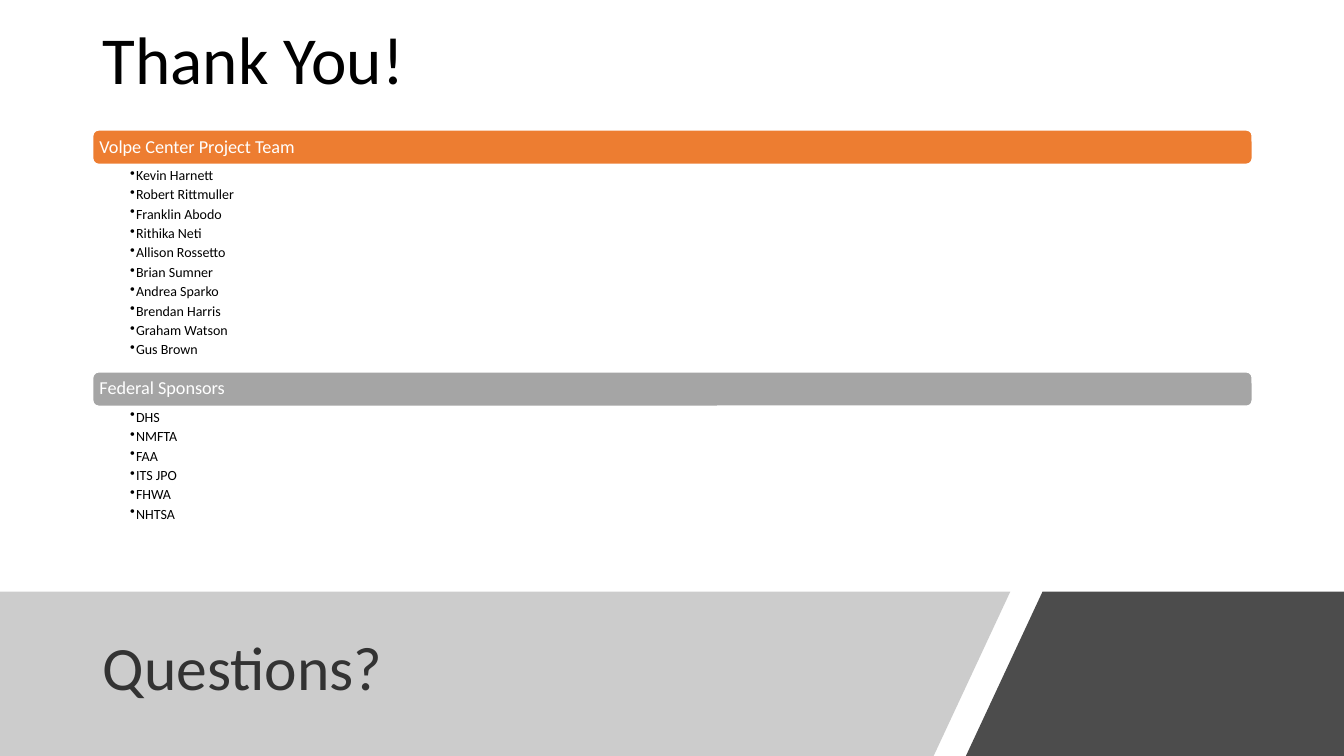
import pptx
import pptx.util
import pptx.dml.color
import pptx.enum.shapes
import pptx.enum.text
import pptx.oxml
import pptx.oxml.ns
from lxml import etree

W, H = 13.33, 7.5
LEFT, WIDTH = 0.92, 11.5
BAR_H = 0.34
FONT = "Calibri"

TEAMS = [
    # heading, bar colour, top, list height, names
    ("Volpe Center Project Team", "ED7D31", 1.29, 2.06,
     ["Kevin Harnett", "Robert Rittmuller", "Franklin Abodo", "Rithika Neti",
      "Allison Rossetto", "Brian Sumner", "Andrea Sparko", "Brendan Harris",
      "Graham Watson", "Gus Brown"]),
    ("Federal Sponsors", "A5A5A5", 3.69, 1.44,
     ["DHS", "NMFTA", "FAA", "ITS JPO", "FHWA", "NHTSA"]),
]


def inches(*values):
    return [pptx.util.Inches(v) for v in values]


def rgb(value):
    return pptx.dml.color.RGBColor.from_string(value)


def format_text(p, size, color):
    p.alignment = pptx.enum.text.PP_ALIGN.LEFT
    for r in p.runs:
        r.font.name = FONT
        r.font.size = pptx.util.Pt(size)
        r.font.color.rgb = rgb(color)


def set_insets(tf, left, top, right, bottom):
    tf.margin_left, tf.margin_top, tf.margin_right, tf.margin_bottom = inches(
        left, top, right, bottom)


def add_band(slide, points, color, opacity):
    """Draw a borderless, partly transparent polygon; points are in inches."""
    builder = slide.shapes.build_freeform(*inches(*points[0]), scale=1.0)
    builder.add_line_segments([inches(*pt) for pt in points[1:]], close=True)
    sp = builder.convert_to_shape()
    sp.shadow.inherit = False
    sp.line.fill.background()
    sp.fill.solid()
    sp.fill.fore_color.rgb = rgb(color)
    clr = sp.fill._xPr.find(".//" + pptx.oxml.ns.qn("a:srgbClr"))
    etree.SubElement(clr, pptx.oxml.ns.qn("a:alpha"), val=str(opacity * 1000))


def add_footer(slide, top):
    """Two slanted bands with the slide title on the light one."""
    slant, gap, edge = 0.76, 0.32, 10.02
    add_band(slide, [(0, top), (edge, top), (edge - slant, H), (0, H)], "808080", 40)
    add_band(slide, [(edge + gap, top), (W, top), (W, H), (edge + gap - slant, H)],
             "000000", 70)

    title = slide.shapes.title
    title.left, title.top, title.width, title.height = inches(LEFT, top + 0.18, 8.44, 1.2)
    tf = title.text_frame
    tf.text = "Questions?"
    tf.auto_size = pptx.enum.text.MSO_AUTO_SIZE.NONE
    tf.vertical_anchor = pptx.enum.text.MSO_ANCHOR.MIDDLE
    tf.paragraphs[0].line_spacing = 0.9
    format_text(tf.paragraphs[0], 44, "000000")


def add_thanks(slide, left, top):
    box = slide.shapes.add_textbox(*inches(left, top, 3.23, 0.91))
    tf = box.text_frame
    tf.text = "Thank You!"
    tf.word_wrap = False
    tf.auto_size = pptx.enum.text.MSO_AUTO_SIZE.SHAPE_TO_FIT_TEXT
    format_text(tf.paragraphs[0], 48, "000000")


def add_team(slide, left, top, width, list_height, heading, color, names):
    """A coloured heading bar with a bulleted list of names below it."""
    # Heading bar
    bar = slide.shapes.add_shape(pptx.enum.shapes.MSO_SHAPE.ROUNDED_RECTANGLE,
                                 *inches(left, top, width, BAR_H))
    bar.shadow.inherit = False
    bar.fill.solid()
    bar.fill.fore_color.rgb = rgb(color)
    bar.line.color.rgb = rgb("FFFFFF")
    bar.line.width = pptx.util.Pt(1)
    tf = bar.text_frame
    tf.text = heading
    tf.vertical_anchor = pptx.enum.text.MSO_ANCHOR.MIDDLE
    set_insets(tf, 0.05, 0.05, 0.05, 0.05)
    tf.paragraphs[0].line_spacing = 0.9
    format_text(tf.paragraphs[0], 13, "FFFFFF")

    # Names
    box = slide.shapes.add_textbox(*inches(left, top + BAR_H, width, list_height))
    tf = box.text_frame
    tf.word_wrap = True
    set_insets(tf, 0.37, 0.02, 0.1, 0.02)
    tf.text = "\n".join(names)
    indent = pptx.util.Inches(0.06)
    for p in tf.paragraphs:
        p.level = 1
        p.space_after = pptx.util.Pt(1.85)
        format_text(p, 10, "000000")
        pPr = p._p.get_or_add_pPr()
        pPr.set("marL", str(indent))
        pPr.set("indent", str(-indent))
        etree.SubElement(pPr, pptx.oxml.ns.qn("a:buChar"), char="•")


def main():
    prs = pptx.Presentation()
    prs.slide_width, prs.slide_height = inches(W, H)
    slide = prs.slides.add_slide(prs.slide_layouts[5])
    add_footer(slide, 5.87)
    for heading, color, top, list_height, names in TEAMS:
        add_team(slide, LEFT, top, WIDTH, list_height, heading, color, names)
    add_thanks(slide, LEFT, 0.12)
    prs.save("out.pptx")


if __name__ == "__main__":
    main()
